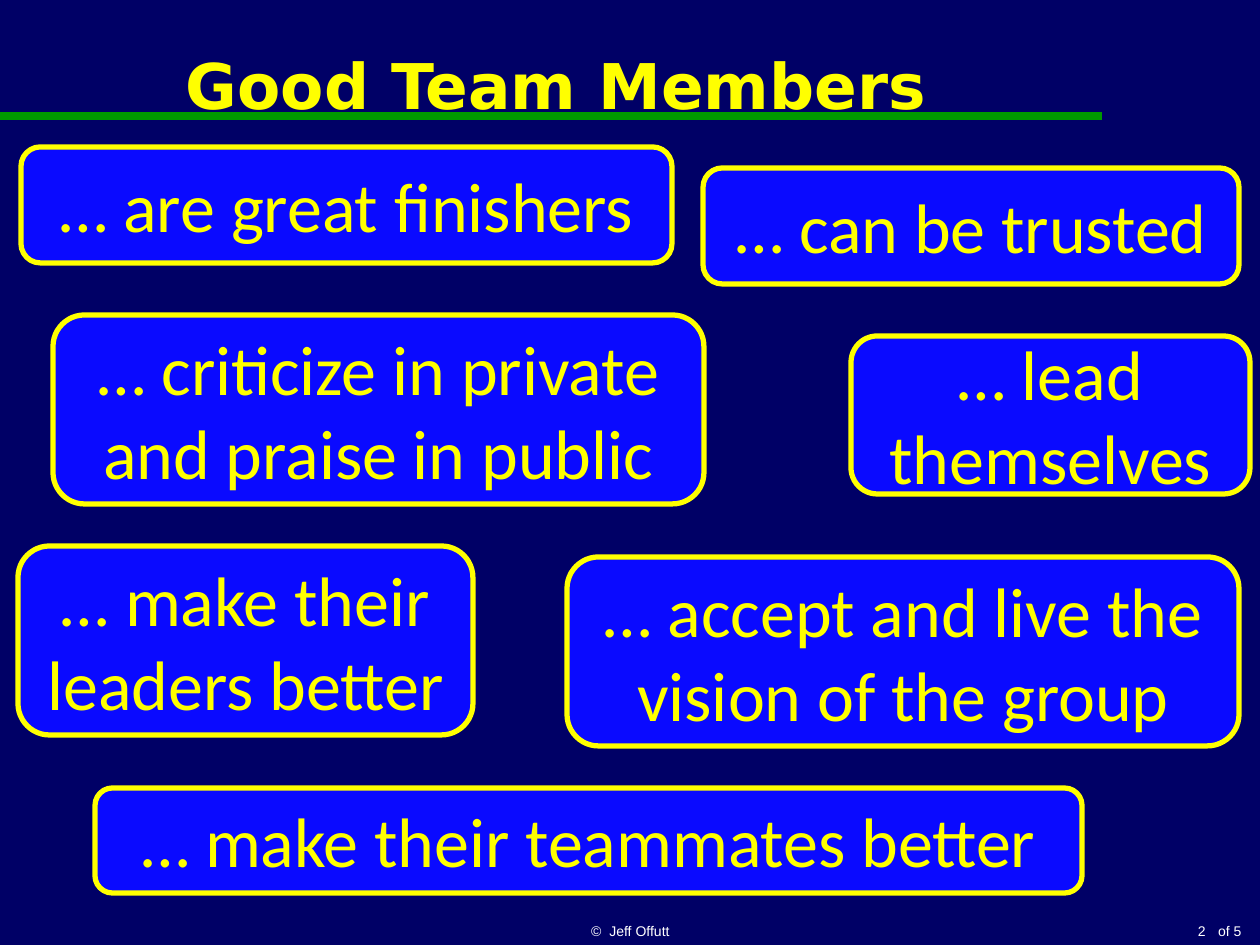
from lxml import etree
from pptx import Presentation
from pptx import util as u
from pptx.dml.color import RGBColor
from pptx.enum import shapes, text
from pptx.oxml.ns import qn

PX = u.Inches(1) / 126
NAVY, BLUE, YELLOW, GREEN, WHITE = "000066", "0A0AFF", "FFFF00", "009900", "FFFFFF"
LEFT, MID, RIGHT = text.PP_ALIGN.LEFT, text.PP_ALIGN.CENTER, text.PP_ALIGN.RIGHT
CENTER, BOTTOM = text.MSO_ANCHOR.MIDDLE, text.MSO_ANCHOR.BOTTOM

TRAITS = [
    ("… are great finishers", (21, 147, 651, 116), CENTER),
    ("… criticize in private and praise in public", (53, 315, 651, 189), CENTER),
    ("… can be trusted", (703, 168, 536, 116), CENTER),
    ("… accept and live the vision of the group", (567, 557, 672, 189), CENTER),
    ("… make their leaders better", (18, 546, 455, 189), CENTER),
    ("… make their teammates better", (95, 788, 987, 105), BOTTOM),
    ("… lead themselves", (851, 336, 399, 158), CENTER),
]


def emu(*vals):
    return [u.Emu(round(v * PX)) for v in vals]


def color(code):
    return RGBColor.from_string(code)


def write(shape, words, size, font, code, align=MID, anchor=CENTER, bold=False, wrap=True):
    frame = shape.text_frame
    frame.word_wrap = wrap
    frame.vertical_anchor = anchor
    para = frame.paragraphs[0]
    para.alignment = align
    run = para.add_run()
    run.text = words
    run.font.size = u.Pt(size)
    run.font.name = font
    run.font.bold = bold
    run.font.color.rgb = color(code)


def header(slide, box):
    """Title with a green rule near the bottom of its box."""
    x, y, w, h = box
    rule = slide.shapes.add_connector(
        shapes.MSO_CONNECTOR.STRAIGHT, *emu(0, y + h - 52, x + w, y + h - 52))
    rule.line.color.rgb = color(GREEN)
    rule.line.width = u.Pt(4.5)
    etree.SubElement(rule._element.spPr, qn("a:effectLst"))
    title = slide.shapes.add_textbox(*emu(*box))
    write(title, "Good Team Members", 36, "DejaVu Sans", YELLOW, bold=True)


def bubble(slide, box, words, anchor):
    shape = slide.shapes.add_shape(shapes.MSO_SHAPE.ROUNDED_RECTANGLE, *emu(*box))
    shape.shadow.inherit = False
    shape.fill.solid()
    shape.fill.fore_color.rgb = color(BLUE)
    shape.line.color.rgb = color(YELLOW)
    shape.line.width = u.Pt(3)
    write(shape, words, 40, "Calibri", YELLOW, anchor=anchor)


def footer(slide, box):
    """Copyright in the middle, page count at the right."""
    x, y, w, h = box
    parts = [
        ("©  Jeff Offutt", (x + 431, y, 399, h), MID, True),
        ("2", (x + 998, y, 220, h), RIGHT, True),
        ("of 5", (x + w - 55, y, 49, h), RIGHT, False),
    ]
    for words, spot, align, wrap in parts:
        note = slide.shapes.add_textbox(*emu(*spot))
        write(note, words, 8, "Arial", WHITE, align, BOTTOM, wrap=wrap)


def main():
    deck = Presentation()
    deck.slide_width, deck.slide_height = emu(1260, 945)
    slide = deck.slides.add_slide(deck.slide_layouts[6])
    slide.background.fill.solid()
    slide.background.fill.fore_color.rgb = color(NAVY)
    header(slide, (10, 0, 1092, 168))
    for words, box, anchor in TRAITS:
        bubble(slide, box, words, anchor)
    footer(slide, (0, 903, 1260, 42))
    deck.save("out.pptx")


if __name__ == "__main__":
    main()
